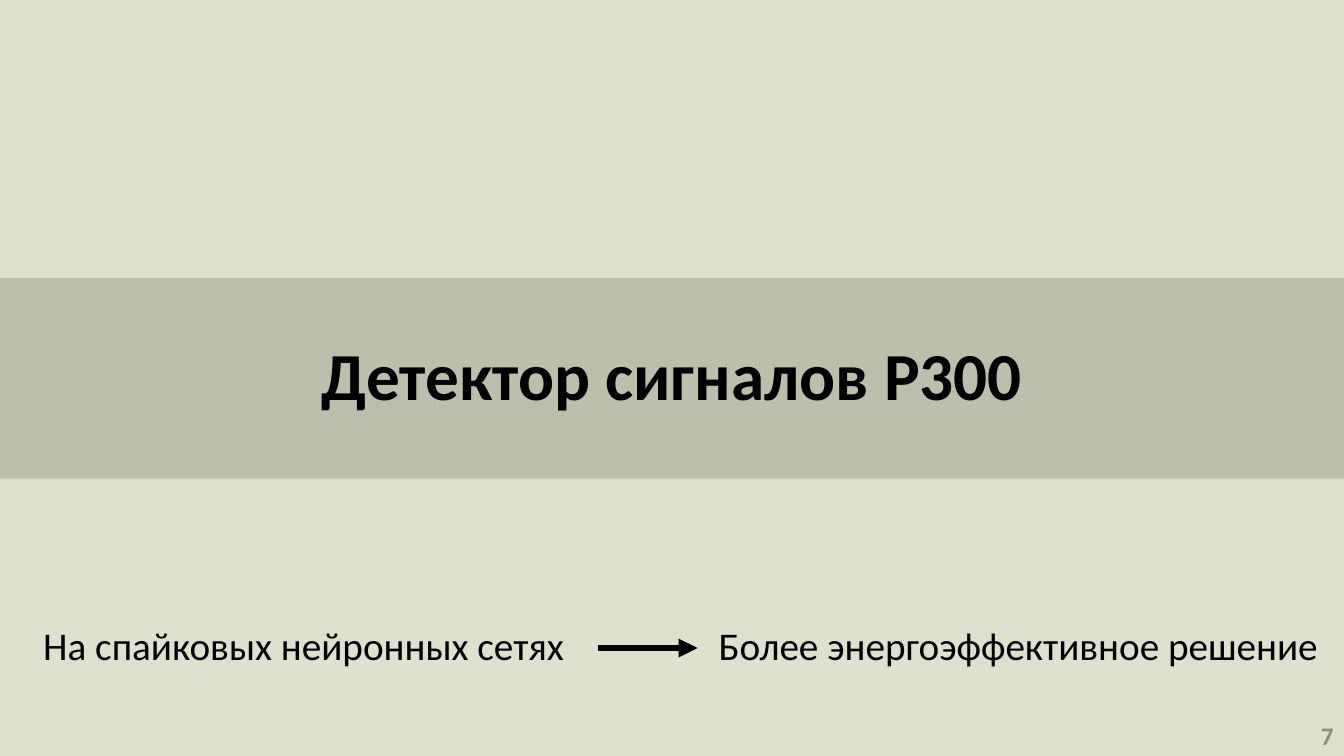
"""Build the section slide on the P300 signal detector."""
from dataclasses import dataclass

from lxml.etree import SubElement
from pptx import Presentation
from pptx.dml.color import RGBColor
from pptx.enum.shapes import MSO_CONNECTOR as Connector
from pptx.enum.text import MSO_ANCHOR as Anchor, PP_ALIGN as Align
from pptx.oxml.ns import qn
from pptx.slide import Slide
from pptx.text.text import TextFrame
from pptx.util import Cm, Pt


@dataclass(frozen=True)
class Theme:
    font: str = "Calibri"
    page: str = "DFE0CD"
    band: str = "BDBEAB"
    ink: str = "000000"
    muted: str = "8C8C8C"
    title_size: float = 48
    body_size: float = 28
    number_size: float = 18
    arrow_width: float = 4.5


@dataclass(frozen=True)
class Label:
    text: str
    left: float
    top: float
    width: float
    height: float
    size: float
    color: str
    bold: bool = False
    align: Align = Align.LEFT
    anchor: Anchor = Anchor.TOP
    wrap: bool = False


THEME = Theme()
SLIDE_WIDTH, SLIDE_HEIGHT = 33.87, 19.05
ROW_TOP, ROW_HEIGHT = 15.52, 1.45
ARROW_START, ARROW_END, ARROW_Y = 15.06, 17.58, 16.33

LABELS = (
    Label("На спайковых нейронных сетях", 0.84, ROW_TOP, 13.79, ROW_HEIGHT,
          THEME.body_size, THEME.ink),
    Label("Более энергоэффективное решение", 17.86, ROW_TOP, 15.77, ROW_HEIGHT,
          THEME.body_size, THEME.ink),
    Label("7", 26.24, 18.03, 7.62, 1.02, THEME.number_size, THEME.muted,
          bold=True, align=Align.RIGHT, anchor=Anchor.MIDDLE, wrap=True),
)


def write_text(frame: TextFrame, text: str, *, size: float, color: str,
               bold: bool = False, align: Align = Align.LEFT,
               anchor: Anchor = Anchor.TOP, wrap: bool = True,
               line_spacing: float = 1.0) -> None:
    frame.word_wrap = wrap
    frame.vertical_anchor = anchor
    para = frame.paragraphs[0]
    para.alignment = align
    para.line_spacing = line_spacing
    span = para.add_run()
    span.text = text
    span.font.name = THEME.font
    span.font.size = Pt(size)
    span.font.bold = bold
    span.font.color.rgb = RGBColor.from_string(color)


def add_title(page: Slide, text: str) -> None:
    title = page.shapes.title
    title.left, title.top = Cm(0), Cm(7.01)
    title.width, title.height = Cm(SLIDE_WIDTH), Cm(5.05)
    title.fill.solid()
    title.fill.fore_color.rgb = RGBColor.from_string(THEME.band)
    write_text(title.text_frame, text, size=THEME.title_size, color=THEME.ink,
               bold=True, align=Align.CENTER, anchor=Anchor.MIDDLE,
               line_spacing=0.9)


def add_label(page: Slide, label: Label) -> None:
    box = page.shapes.add_textbox(Cm(label.left), Cm(label.top),
                                  Cm(label.width), Cm(label.height))
    write_text(box.text_frame, label.text, size=label.size, color=label.color,
               bold=label.bold, align=label.align, anchor=label.anchor,
               wrap=label.wrap)


def add_arrow(page: Slide, start: float, end: float, y: float) -> None:
    arrow = page.shapes.add_connector(Connector.STRAIGHT, Cm(start), Cm(y),
                                      Cm(end), Cm(y))
    arrow.line.color.rgb = RGBColor.from_string(THEME.ink)
    arrow.line.width = Pt(THEME.arrow_width)
    properties = arrow.element.spPr
    SubElement(properties.find(qn("a:ln")), qn("a:tailEnd"), type="triangle")
    SubElement(properties, qn("a:effectLst"))


def main() -> None:
    deck = Presentation()
    deck.slide_width, deck.slide_height = Cm(SLIDE_WIDTH), Cm(SLIDE_HEIGHT)
    page = deck.slides.add_slide(deck.slide_layouts.get_by_name("Title Only"))
    page.background.fill.solid()
    page.background.fill.fore_color.rgb = RGBColor.from_string(THEME.page)
    add_title(page, "Детектор сигналов P300")
    for label in LABELS:
        add_label(page, label)
    add_arrow(page, ARROW_START, ARROW_END, ARROW_Y)
    deck.save("out.pptx")


if __name__ == "__main__":
    main()
